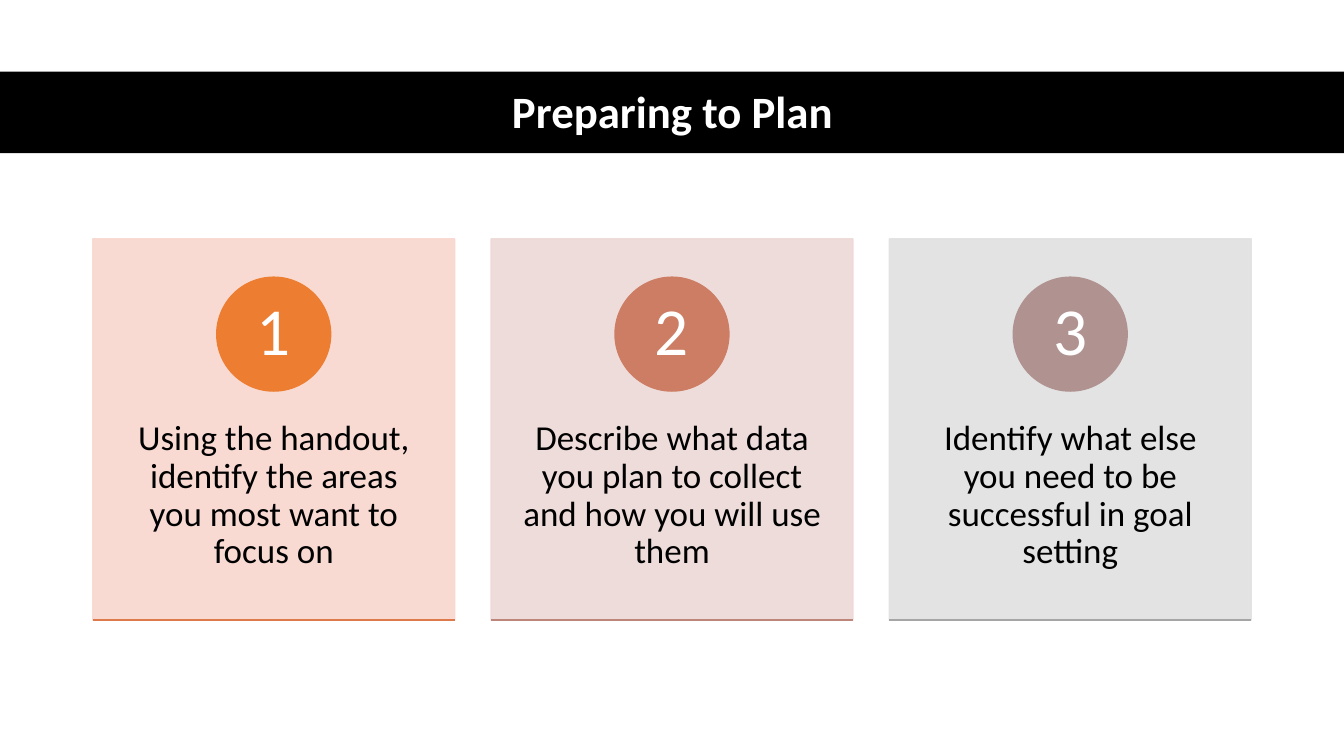
import pptx
import pptx.util
import pptx.dml.color
import pptx.enum.shapes
import pptx.enum.text
import pptx.oxml.ns
import lxml.etree

Inches = pptx.util.Inches
Pt = pptx.util.Pt
SHAPE = pptx.enum.shapes.MSO_SHAPE
ANCHOR = pptx.enum.text.MSO_ANCHOR

COLORS = {
    "bar": "000000", "light": "FFFFFF", "dark": "000000",
    "card1": "F8D7CE", "circle1": "ED7D31", "rule1": "DC7A4B",
    "card2": "EDD9D7", "circle2": "CC7D64", "rule2": "BD867B",
    "card3": "E1E1E1", "circle3": "B09391", "rule3": "A5A5A5",
}
STEPS = [
    "Using the handout, identify the areas you most want to focus on",
    "Describe what data you plan to collect and how you will use them",
    "Identify what else you need to be successful in goal setting",
]


def rgb(name):
    return pptx.dml.color.RGBColor.from_string(COLORS[name])


def add_alpha(sp, percent):
    for clr in sp._element.spPr.iter(pptx.oxml.ns.qn("a:srgbClr")):
        alpha = lxml.etree.SubElement(clr, pptx.oxml.ns.qn("a:alpha"))
        alpha.set("val", str(percent * 1000))


def add_filled(slide, kind, box, color):
    sp = slide.shapes.add_shape(kind, *map(Inches, box))
    sp.shadow.inherit = False
    sp.fill.solid()
    sp.fill.fore_color.rgb = rgb(color)
    sp.line.color.rgb = rgb(color)
    sp.line.width = Pt(1)
    return sp


def set_text(sp, text, size, color, inset, anchor, bold=False):
    tf = sp.text_frame
    tf.word_wrap = True
    tf.vertical_anchor = anchor
    tf.margin_left = tf.margin_right = Inches(inset[0])
    tf.margin_top = tf.margin_bottom = Inches(inset[1])
    p = tf.paragraphs[0]
    p.text = text
    p.alignment = pptx.enum.text.PP_ALIGN.CENTER
    p.line_spacing = 0.9
    p.font.name = "Calibri"
    p.font.size = Pt(size)
    p.font.bold = bold
    p.font.color.rgb = rgb(color)


def add_title(slide, x, y, w, h):
    bar = add_filled(slide, SHAPE.RECTANGLE, (x, y, w, h), "bar")
    bar.line.fill.background()
    sp = slide.shapes.add_textbox(Inches(x + 0.92), Inches(y + 0.03), Inches(w - 1.83), Inches(h - 0.03))
    set_text(sp, "Preparing to Plan", 32, "light", (0.1, 0.05), ANCHOR.MIDDLE, True)


def add_card(slide, x, y, w, h, number, text):
    card = add_filled(slide, SHAPE.RECTANGLE, (x, y, w, h), f"card{number}")
    add_alpha(card, 90)

    body = slide.shapes.add_textbox(Inches(x), Inches(y + 1.44), Inches(w), Inches(2.27))
    set_text(body, text, 25, "dark", (0.28, 0.36), ANCHOR.TOP)

    d = 1.13
    circle = add_filled(slide, SHAPE.OVAL, (x + (w - d) / 2, y + 0.38, d, d), f"circle{number}")
    set_text(circle, str(number), 48, "light", (0.09, 0.01), ANCHOR.MIDDLE)

    rule = slide.shapes.add_connector(
        pptx.enum.shapes.MSO_CONNECTOR.STRAIGHT,
        Inches(x), Inches(y + h), Inches(x + w), Inches(y + h))
    rule.line.color.rgb = rgb(f"rule{number}")
    rule.line.width = Pt(1)
    lxml.etree.SubElement(rule._element.spPr, pptx.oxml.ns.qn("a:effectLst"))


def add_cards(slide, x, y, w, h):
    gap = 0.36
    card_w = (w - gap * (len(STEPS) - 1)) / len(STEPS)
    for i, text in enumerate(STEPS):
        add_card(slide, x + i * (card_w + gap), y, card_w, h, i + 1, text)


def main():
    prs = pptx.Presentation()
    prs.slide_width = Inches(13.33)
    prs.slide_height = Inches(7.5)
    slide = prs.slides.add_slide(prs.slide_layouts[6])
    add_title(slide, 0, 0.71, 13.33, 0.81)
    add_cards(slide, 0.92, 2.37, 11.49, 3.78)
    prs.save("out.pptx")


if __name__ == "__main__":
    main()
